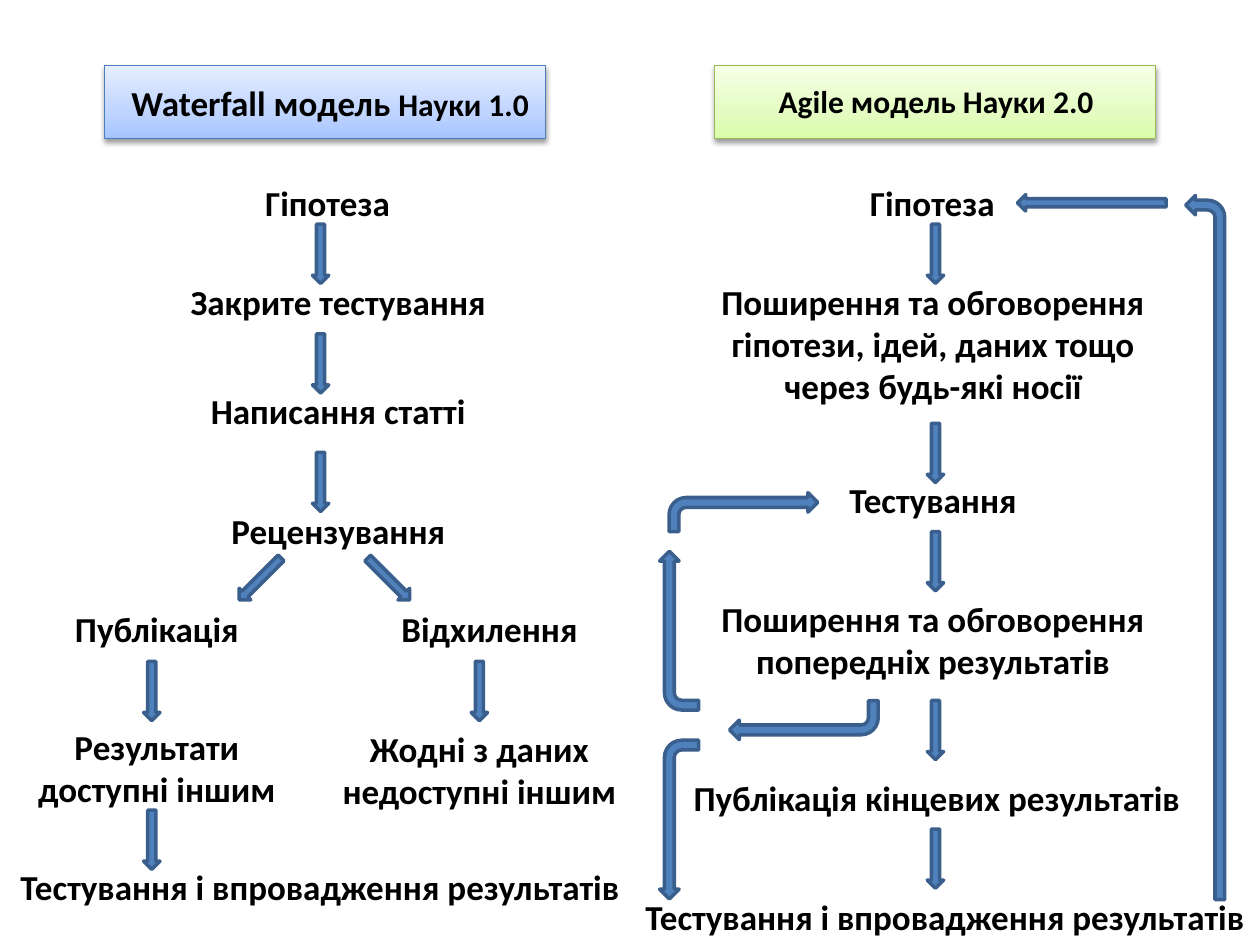
import copy
from typing import NamedTuple

from lxml import etree
from pptx import Presentation
from pptx import util as u
from pptx.dml.color import RGBColor
from pptx.enum import shapes, text
from pptx.oxml.ns import qn

BLACK = RGBColor(0x00, 0x00, 0x00)
ARROW_FILL = RGBColor(0x4F, 0x81, 0xBD)
ARROW_LINE = RGBColor(0x3A, 0x5F, 0x8C)
BLUE_LINE = RGBColor(0x4B, 0x7E, 0xBC)
BLUES = [RGBColor(0xA4, 0xC4, 0xFF), RGBColor(0xBF, 0xD4, 0xFF), RGBColor(0xE6, 0xEE, 0xFF)]
GREEN_LINE = RGBColor(0x98, 0xB9, 0x55)
GREENS = [RGBColor(0xDA, 0xFD, 0xA7), RGBColor(0xE4, 0xFC, 0xC2), RGBColor(0xF5, 0xFF, 0xE7)]
STOP_POSITIONS = [0, 0.35, 1]
ARROW_WIDTH, ARROW_LENGTH = 0.13, 0.47
BEND_DEPTH = 0.31


class Step(NamedTuple):
    words: str
    left: float
    top: float
    width: float
    lines: int = 1


class Arrow(NamedTuple):
    left: float
    top: float
    width: float = ARROW_WIDTH
    height: float = ARROW_LENGTH
    rotation: float = 0
    flipped: bool = False


class Span(NamedTuple):
    words: str
    size: int


FINAL_STEP = "Тестування і впровадження результатів"
STEPS = [
    Step("Гіпотеза", 1.93, 1.39, 1.34),
    Step("Закрите тестування", 1.22, 2.18, 2.93),
    Step("Написання статті", 1.22, 3.04, 2.93),
    Step("Рецензування", 1.22, 3.99, 2.93),
    Step("Публікація", 0, 4.77, 2.49),
    Step("Відхилення", 2.64, 4.77, 2.49),
    Step("Результати доступні іншим", 0, 5.71, 2.49, 2),
    Step("Жодні з даних недоступні іншим", 2.56, 5.72, 2.49, 2),
    Step(FINAL_STEP, 0, 6.82, 5.08),
    Step("Гіпотеза", 6.73, 1.39, 1.34),
    Step("Поширення та обговорення гіпотези, ідей, даних тощо через будь-які носії",
         5.39, 2.18, 4.03, 3),
    Step("Тестування", 5.94, 3.75, 2.93),
    Step("Поширення та обговорення попередніх результатів", 5.39, 4.69, 4.03, 2),
    Step("Публікація кінцевих результатів", 5.39, 6.11, 4.09),
    Step(FINAL_STEP, 5, 7.06, 5),
]

DOWN_COLUMNS = {
    2.48: [1.78, 2.65, 3.59],
    1.14: [5.25, 6.43],
    3.74: [5.25],
    7.36: [1.78, 3.36, 4.22, 5.56, 6.58],
}
STRAIGHT_ARROWS = [
    Arrow(left, top) for left, tops in DOWN_COLUMNS.items() for top in tops
] + [
    Arrow(2, 4.36, rotation=45),
    Arrow(3.02, 4.36, rotation=315),
    Arrow(8.6, 1.02, height=1.18, rotation=90),
]
BENT_ARROWS = [
    Arrow(5.31, 3.91, 1.18, BEND_DEPTH),
    Arrow(5.79, 5.56, 1.18, BEND_DEPTH, 180),
    Arrow(4.76, 4.85, 1.26, BEND_DEPTH, 270),
    Arrow(4.76, 6.35, 1.26, BEND_DEPTH, 90, True),
    Arrow(9.41, 1.55, BEND_DEPTH, 5.59, 180, True),
]


def add_panel(page, left: float, colors: list[RGBColor], line: RGBColor) -> None:
    panel = page.shapes.add_shape(
        shapes.MSO_SHAPE.RECTANGLE, u.Inches(left), u.Inches(0.52), u.Inches(3.5), u.Inches(0.58))
    panel.fill.gradient()
    panel.fill.gradient_angle = 90
    properties = panel.element.spPr
    stops = properties.find(".//" + qn("a:gsLst"))
    stops.append(copy.deepcopy(stops[0]))
    for stop, position, color in zip(panel.fill.gradient_stops, STOP_POSITIONS, colors):
        stop.position = position
        stop.color.rgb = color
    panel.line.color.rgb = line
    panel.line.width = u.Pt(0.75)
    panel.shadow.inherit = False
    shadow = etree.SubElement(
        properties.find(qn("a:effectLst")), qn("a:outerShdw"),
        blurRad=str(u.Pt(3.1)), dist=str(u.Pt(1.6)), dir="5400000", rotWithShape="0")
    color = etree.SubElement(shadow, qn("a:srgbClr"), val=str(BLACK))
    etree.SubElement(color, qn("a:alpha"), val="38000")


def add_words(page, left: float, top: float, width: float, height: float,
              spans: list[Span], wrap: bool, anchor: text.MSO_ANCHOR) -> None:
    box = page.shapes.add_textbox(u.Inches(left), u.Inches(top), u.Inches(width), u.Inches(height))
    frame = box.text_frame
    frame.word_wrap = wrap
    frame.auto_size = text.MSO_AUTO_SIZE.SHAPE_TO_FIT_TEXT
    frame.vertical_anchor = anchor
    para = frame.paragraphs[0]
    para.alignment = text.PP_ALIGN.CENTER
    para.font.name = "Calibri"
    para.font.bold = True
    para.font.color.rgb = BLACK
    for words, size in spans:
        span = para.add_run()
        span.text = words
        span.font.size = u.Pt(size)
        span.font.name = "Calibri"
        span.font.bold = True
        span.font.color.rgb = BLACK


def add_step(page, step: Step) -> None:
    height = 0.1 + step.lines / 3
    add_words(page, step.left, step.top, step.width, height,
              [Span(step.words, 20)], True, text.MSO_ANCHOR.MIDDLE)


def add_arrow(page, kind: shapes.MSO_SHAPE, arrow: Arrow) -> None:
    shape = page.shapes.add_shape(
        kind, u.Inches(arrow.left), u.Inches(arrow.top),
        u.Inches(arrow.width), u.Inches(arrow.height))
    shape.rotation = arrow.rotation
    if arrow.flipped:
        shape.element.spPr.find(qn("a:xfrm")).set("flipV", "1")
    shape.fill.solid()
    shape.fill.fore_color.rgb = ARROW_FILL
    shape.line.color.rgb = ARROW_LINE
    shape.line.width = u.Pt(2)
    shape.shadow.inherit = False


def main() -> None:
    deck = Presentation()
    deck.slide_width, deck.slide_height = u.Inches(10), u.Inches(7.5)
    page = deck.slides.add_slide(deck.slide_layouts[6])
    add_panel(page, 5.67, GREENS, GREEN_LINE)
    add_panel(page, 0.83, BLUES, BLUE_LINE)
    add_words(page, 0.94, 0.6, 3.36, 0.44,
              [Span("Waterfall модель ", 20), Span("Науки 1.0", 18)], False, text.MSO_ANCHOR.TOP)
    add_words(page, 6.07, 0.6, 2.72, 0.4,
              [Span("Agile модель Науки 2.0", 18)], False, text.MSO_ANCHOR.TOP)
    for step in STEPS:
        add_step(page, step)
    for arrow in STRAIGHT_ARROWS:
        add_arrow(page, shapes.MSO_SHAPE.DOWN_ARROW, arrow)
    for arrow in BENT_ARROWS:
        add_arrow(page, shapes.MSO_SHAPE.BENT_ARROW, arrow)
    deck.save("out.pptx")


if __name__ == "__main__":
    main()
